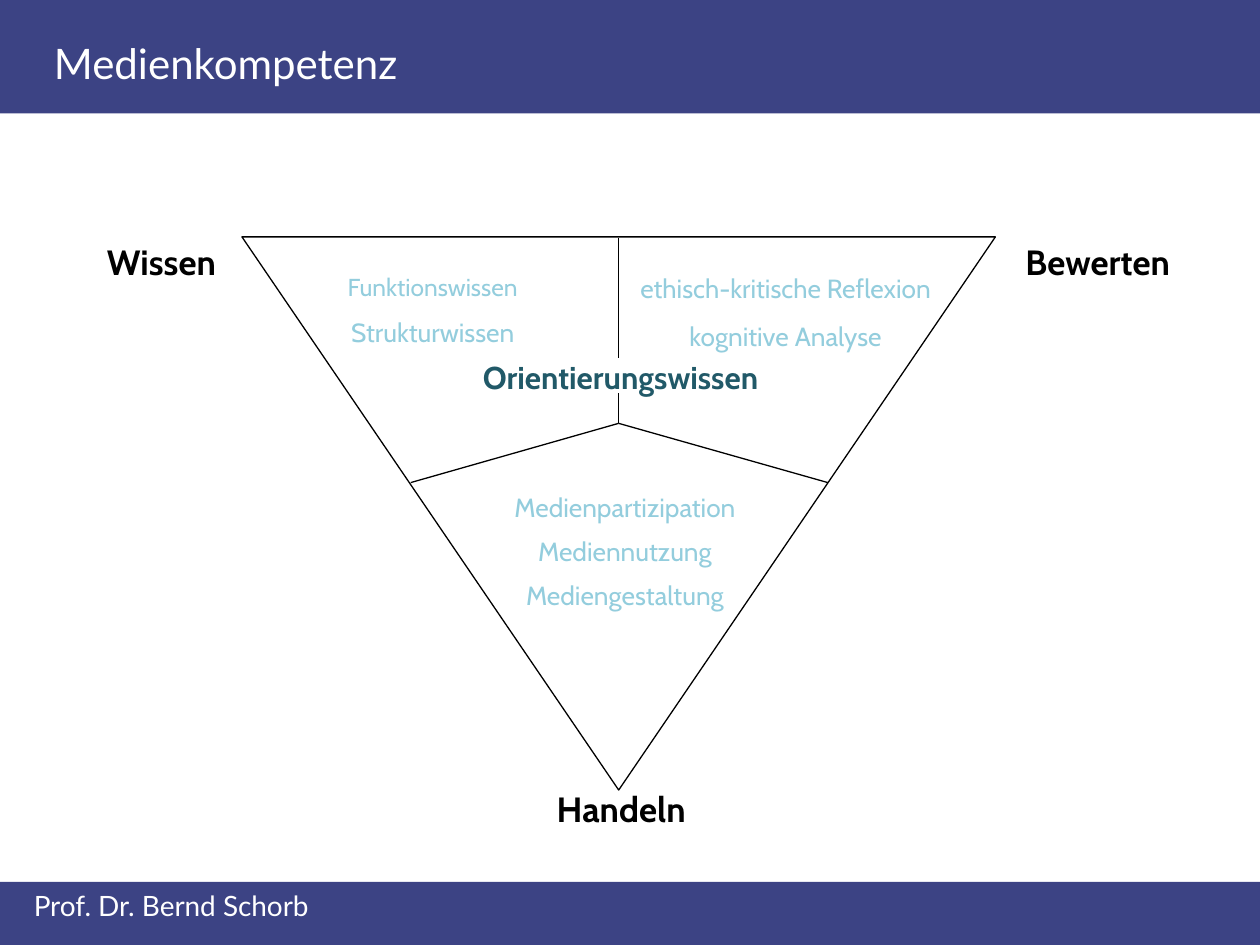
from pptx import Presentation
from pptx.dml.color import RGBColor
from pptx.enum.shapes import MSO_CONNECTOR, MSO_SHAPE
from pptx.enum.text import MSO_AUTO_SIZE, PP_ALIGN
from pptx.oxml.ns import qn
from pptx.util import Emu, Pt
from lxml import etree

RECT = MSO_SHAPE.RECTANGLE
TRIANGLE = MSO_SHAPE.ISOSCELES_TRIANGLE
STRAIGHT = MSO_CONNECTOR.STRAIGHT
GROW = MSO_AUTO_SIZE.SHAPE_TO_FIT_TEXT
LEFT, CENTER = PP_ALIGN.LEFT, PP_ALIGN.CENTER
SCALE = 9144
COLORS = {
    "bar": "3C4384",
    "white": "FFFFFF",
    "black": "000000",
    "light": "93CDDD",
    "dark": "215968",
}


def px(*values):
    return [Emu(value * SCALE) for value in values]


def color(name):
    return RGBColor.from_string(COLORS[name])


class Painter:
    def __init__(self, slide, font, stroke):
        self.slide = slide
        self.font = font
        self.stroke = Pt(stroke)

    def bar(self, top, height):
        shape = self.slide.shapes.add_shape(RECT, *px(0, top, 1000, height))
        shape.shadow.inherit = False
        shape.fill.solid()
        shape.fill.fore_color.rgb = color("bar")
        shape.line.fill.background()

    def triangle(self, *box):
        shape = self.slide.shapes.add_shape(TRIANGLE, *px(*box))
        shape.shadow.inherit = False
        shape.rotation = 180
        shape.fill.background()
        shape.line.color.rgb = color("black")
        shape.line.width = self.stroke

    def line(self, start, end):
        line = self.slide.shapes.add_connector(STRAIGHT, *px(*start, *end))
        line.line.color.rgb = color("black")
        line.line.width = self.stroke
        etree.SubElement(line._element.spPr, qn("a:effectLst"))

    def text(self, box, rows, tint, bold=False, align=LEFT,
             spacing=None, font=None, wrap=False):
        frame = self.slide.shapes.add_textbox(*px(*box)).text_frame
        frame.word_wrap = wrap
        frame.auto_size = GROW
        for index, (words, size) in enumerate(rows):
            para = frame.add_paragraph() if index else frame.paragraphs[0]
            para.alignment = align
            if spacing:
                para.line_spacing = spacing
            run = para.add_run()
            run.text = words
            run.font.name = font or self.font
            run.font.size = Pt(size)
            run.font.bold = bold
            run.font.color.rgb = color(tint)


def main():
    deck = Presentation()
    deck.slide_width, deck.slide_height = px(1000, 750)
    paint = Painter(deck.slides.add_slide(deck.slide_layouts[6]), "Cabin", 0.75)

    for top, height, box, words, size in (
        (0, 90, (33, 25, 734, 50), "Medienkompetenz", 24),
        (700, 50, (17, 700, 967, 37), "Prof. Dr. Bernd Schorb", 16),
    ):
        paint.bar(top, height)
        paint.text(box, [(words, size)], "white", font="Lato", wrap=True)

    paint.triangle(192, 188, 598, 439)
    hub = (491, 336)
    for start, end in (
        ((491, 189), (491, 284)),
        ((491, 312), hub),
        ((326, 383), hub),
        (hub, (657, 383)),
    ):
        paint.line(start, end)

    for box, words in (
        ((75, 186, 110, 44), "Wissen"),
        ((804, 186, 147, 44), "Bewerten"),
        ((432, 620, 130, 43), "Handeln"),
    ):
        paint.text(box, [(words, 20)], "black", bold=True)

    for box, spacing, rows in (
        ((392, 375, 208, 116), 1.4,
         [("Medienpartizipation", 15), ("Mediennutzung", 15), ("Mediengestaltung", 15)]),
        ((263, 199, 161, 83), 1.5,
         [("Funktionswissen", 14), ("Strukturwissen", 15)]),
        ((488, 199, 271, 88), 1.5,
         [("ethisch-kritische Reflexion", 15), ("kognitive Analyse", 15)]),
    ):
        paint.text(box, rows, "light", align=CENTER, spacing=spacing)

    paint.text((362, 279, 261, 49), [("Orientierungswissen", 18)], "dark",
               bold=True, align=CENTER)

    deck.save("out.pptx")


if __name__ == "__main__":
    main()
